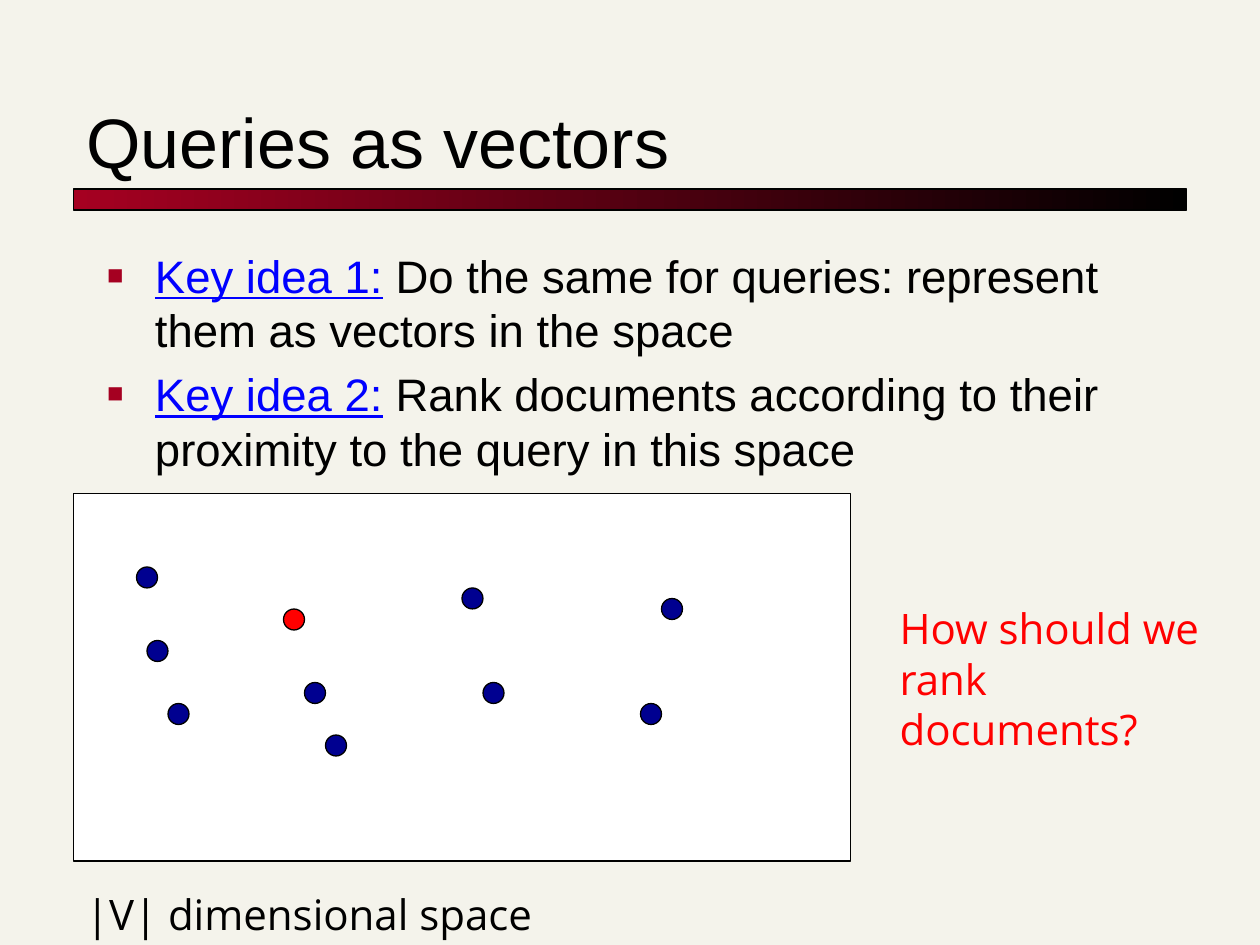
"""Build the slide on queries as vectors, laid out on a grid of 120 columns by 90 rows."""
import pptx
import pptx.dml.color
import pptx.enum.shapes
import pptx.enum.text
import pptx.util
import lxml.etree

COLORS = {
    "background": "F4F3EB", "accent": "A50021", "black": "000000", "white": "FFFFFF",
    "key": "0000FF", "query": "FF0000", "document": "000090",
}
SHAPES = pptx.enum.shapes.MSO_SHAPE
ANCHORS = pptx.enum.text.MSO_ANCHOR
NO_AUTOFIT = pptx.enum.text.MSO_AUTO_SIZE.NONE
LEFT = pptx.enum.text.PP_ALIGN.LEFT

presentation = pptx.Presentation()
presentation.slide_width = pptx.util.Inches(10)
presentation.slide_height = pptx.util.Inches(7.5)
column = presentation.slide_width / 120
row = presentation.slide_height / 90
slide = presentation.slides.add_slide(presentation.slide_layouts[1])
slide.background.fill.solid()
slide.background.fill.fore_color.rgb = pptx.dml.color.RGBColor.from_string(COLORS["background"])


def add_outlined(kind, left, top, width, height, color):
    shape = slide.shapes.add_shape(
        kind, int(left * column), int(top * row), int(width * column), int(height * row))
    shape.shadow.inherit = False
    shape.fill.solid()
    shape.fill.fore_color.rgb = pptx.dml.color.RGBColor.from_string(COLORS[color])
    shape.line.color.rgb = pptx.dml.color.RGBColor.from_string(COLORS["black"])
    shape.line.width = pptx.util.Pt(0.75)
    return shape


def add_run(paragraph, text, color, name, size, underline=False):
    run = paragraph.add_run()
    run.text = text
    font_format = {"name": name, "size": pptx.util.Pt(size), "underline": underline}
    for attribute, value in font_format.items():
        setattr(run.font, attribute, value)
    run.font.color.rgb = pptx.dml.color.RGBColor.from_string(COLORS[color])


title_bar = add_outlined(SHAPES.RECTANGLE, 7, 18, 106, 2, "accent")
title_bar.fill.gradient()
title_bar.fill.gradient_angle = 0
for stop, (position, color) in zip(title_bar.fill.gradient_stops, [(0, "accent"), (1, "black")]):
    stop.position = position
    stop.color.rgb = pptx.dml.color.RGBColor.from_string(COLORS[color])

title, body = slide.placeholders
placeholder_formats = [
    (title, (7, 5, 106, 13), ANCHORS.BOTTOM),
    (body, (9, 23, 102, 25), ANCHORS.TOP),
]
for placeholder, (left, top, width, height), anchor in placeholder_formats:
    box_format = {"left": left * column, "top": top * row,
                  "width": width * column, "height": height * row}
    for attribute, value in box_format.items():
        setattr(placeholder, attribute, int(value))
    frame_format = {"auto_size": NO_AUTOFIT, "word_wrap": True, "vertical_anchor": anchor}
    for attribute, value in frame_format.items():
        setattr(placeholder.text_frame, attribute, value)

title_paragraph = title.text_frame.paragraphs[0]
title_paragraph.alignment = LEFT
add_run(title_paragraph, "Queries as vectors", "black", "Arial", 40)

key_ideas = [
    ("Key idea 1:", "Do the same for queries: represent them as vectors in the space"),
    ("Key idea 2:", "Rank documents according to their proximity to the query in this space"),
]
for index, (label, idea) in enumerate(key_ideas):
    paragraph = body.text_frame.add_paragraph() if index else body.text_frame.paragraphs[0]
    paragraph_format = {"alignment": LEFT, "space_before": pptx.util.Pt(5.2), "line_spacing": 1.0}
    for attribute, value in paragraph_format.items():
        setattr(paragraph, attribute, value)
    properties = paragraph._p.get_or_add_pPr()
    properties.set("marL", str(pptx.util.Inches(0.38)))
    properties.set("indent", str(pptx.util.Inches(-0.38)))
    bullet_color = lxml.etree.SubElement(properties, pptx.oxml.ns.qn("a:buClr"))
    lxml.etree.SubElement(bullet_color, pptx.oxml.ns.qn("a:srgbClr"), val=COLORS["accent"])
    lxml.etree.SubElement(properties, pptx.oxml.ns.qn("a:buSzPct"), val="60000")
    lxml.etree.SubElement(properties, pptx.oxml.ns.qn("a:buFont"), typeface="Arial")
    lxml.etree.SubElement(properties, pptx.oxml.ns.qn("a:buChar"), char="■")
    add_run(paragraph, label, "key", "Arial", 26, underline=True)
    add_run(paragraph, " ", "key", "Arial", 26)
    add_run(paragraph, idea, "black", "Arial", 26)

add_outlined(SHAPES.RECTANGLE, 7, 47, 74, 35, "white")

document_points = [(29, 65), (16, 67), (31, 70), (14, 61), (13, 54),
                   (61, 67), (46, 65), (44, 56), (63, 57)]
points = [(27, 58, "query")] + [(left, top, "document") for left, top in document_points]
for left, top, color in points:
    add_outlined(SHAPES.OVAL, left, top, 2, 2, color)

captions = [
    ("|V| dimensional space", (7, 84, 56, 6), "black"),
    ("How should we rank documents?", (84.5, 56.8, 31.4, 15.7), "query"),
]
for text, (left, top, width, height), color in captions:
    caption = slide.shapes.add_textbox(
        int(left * column), int(top * row), int(width * column), int(height * row))
    caption.text_frame.word_wrap = True
    add_run(caption.text_frame.paragraphs[0], text, color, "Open Sans", 24)

presentation.save("out.pptx")
